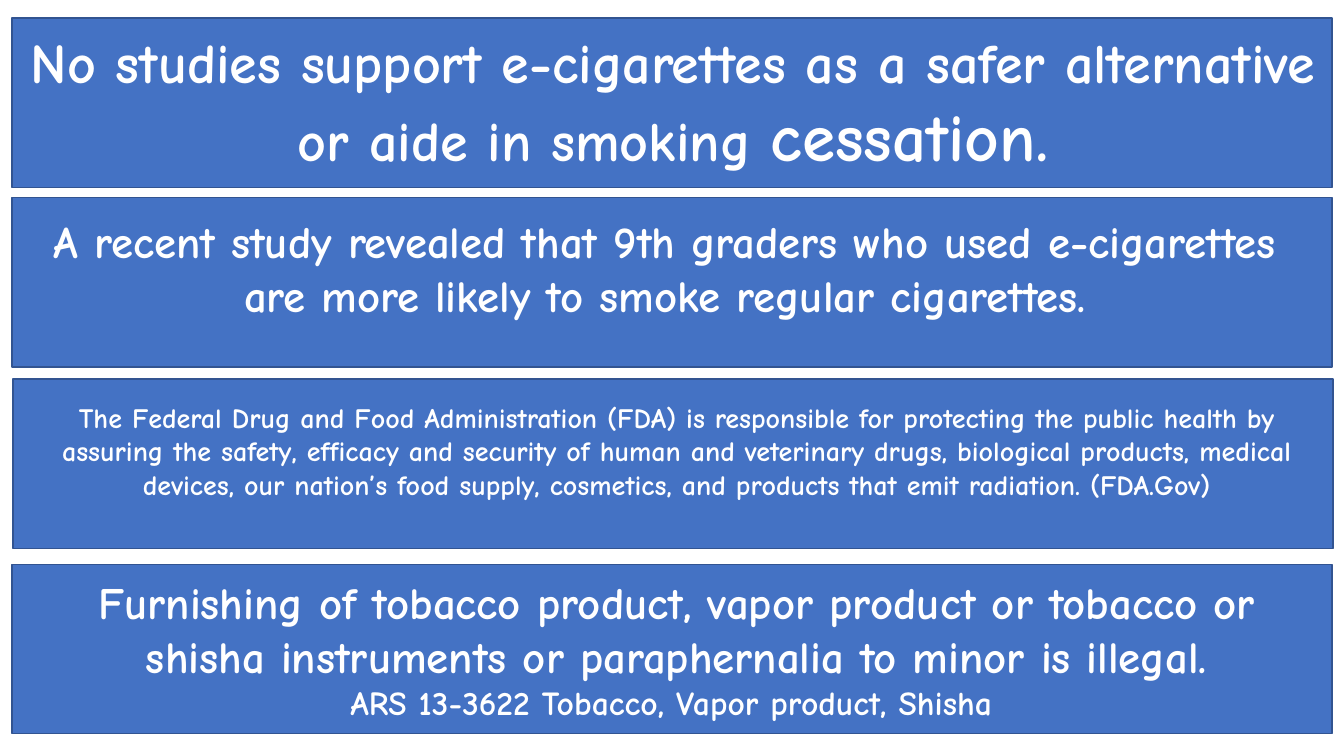
from dataclasses import dataclass

from pptx import Presentation
from pptx.dml.color import RGBColor
from pptx.enum.shapes import MSO_SHAPE as Shape
from pptx.enum.text import MSO_AUTO_SIZE as AutoSize, PP_ALIGN as Align
from pptx.util import Emu, Pt

PX = 9144
FONT = "Comic Neue"
BLUE = RGBColor(0x44, 0x72, 0xC4)
NAVY = RGBColor(0x32, 0x54, 0x91)
WHITE = RGBColor(0xFF, 0xFF, 0xFF)
PANEL_W, PANEL_H = 1309, 168


@dataclass(frozen=True)
class Panel:
    left: int
    top: int


@dataclass(frozen=True)
class Span:
    text: str
    size: int


@dataclass(frozen=True)
class Message:
    left: int
    top: int
    width: int
    height: int
    paragraphs: tuple[tuple[Span, ...], ...]


PANELS = [Panel(12, 18), Panel(12, 196), Panel(13, 376), Panel(12, 560)]

MESSAGES = [
    Message(13, 22, 1309, 158, ((
        Span("No studies support e-cigarettes as a safer alternative "
             "or aide in smoking ", 40),
        Span("cessation.", 48),
    ),)),
    Message(12, 207, 1296, 118, ((
        Span("A recent study revealed that 9th graders who used e-cigarettes "
             "are more likely to smoke regular cigarettes.", 32),
    ),)),
    Message(29, 392, 1285, 145, ((
        Span("The Federal Drug and Food Administration (FDA) is responsible "
             "for protecting the public health by assuring the safety, "
             "efficacy and security of human and veterinary drugs, "
             "biological products, medical devices, our nation’s food "
             "supply, cosmetics, and products that emit radiation. "
             "(FDA.Gov)", 20),
    ),)),
    Message(22, 565, 1299, 158, (
        (Span("Furnishing of tobacco product, vapor product or tobacco or "
              "shisha instruments or paraphernalia to minor is illegal.", 32),),
        (Span("ARS 13-3622 Tobacco, Vapor product, Shisha ", 24),),
    )),
]


def px(n: int) -> Emu:
    return Emu(n * PX)


def draw_panel(s, panel: Panel) -> None:
    sp = s.shapes.add_shape(Shape.RECTANGLE, px(panel.left), px(panel.top),
                            px(PANEL_W), px(PANEL_H))
    sp.shadow.inherit = False
    sp.fill.solid()
    sp.fill.fore_color.rgb = BLUE
    sp.line.color.rgb = NAVY
    sp.line.width = Pt(1)


def draw_message(s, message: Message) -> None:
    sp = s.shapes.add_textbox(px(message.left), px(message.top),
                              px(message.width), px(message.height))
    tf = sp.text_frame
    tf.word_wrap = True
    tf.auto_size = AutoSize.SHAPE_TO_FIT_TEXT
    for i, spans in enumerate(message.paragraphs):
        p = tf.add_paragraph() if i else tf.paragraphs[0]
        p.alignment = Align.CENTER
        for span in spans:
            r = p.add_run()
            r.text = span.text
            r.font.name = FONT
            r.font.size = Pt(span.size)
            r.font.bold = True
            r.font.color.rgb = WHITE


def main() -> None:
    prs = Presentation()
    prs.slide_width, prs.slide_height = px(1333), px(750)
    s = prs.slides.add_slide(prs.slide_layouts[6])
    for panel in PANELS:
        draw_panel(s, panel)
    for message in MESSAGES:
        draw_message(s, message)
    prs.save("out.pptx")


if __name__ == "__main__":
    main()
